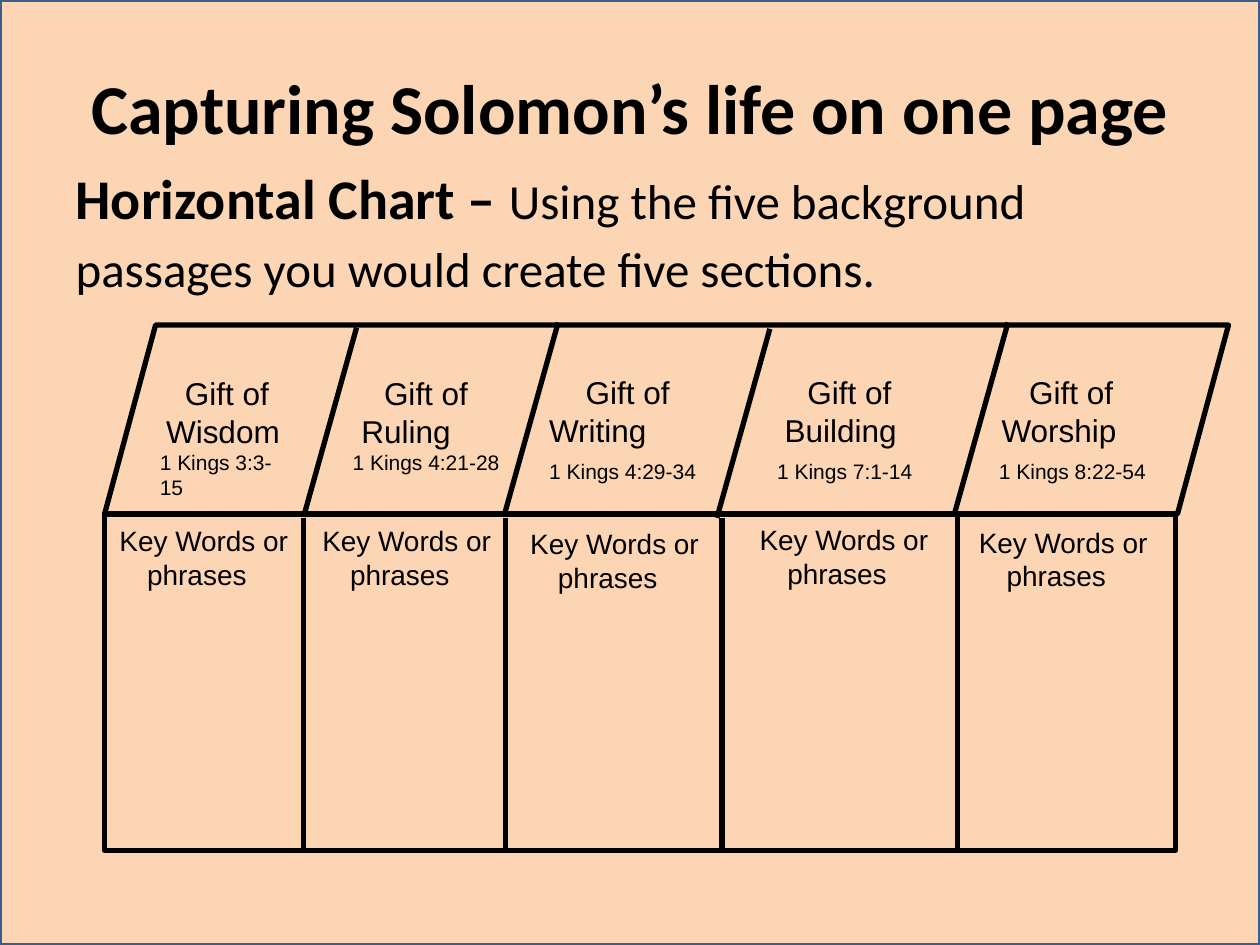
from dataclasses import dataclass
from lxml import etree
from pptx import Presentation
from pptx.dml.color import RGBColor
from pptx.enum.shapes import MSO_CONNECTOR, MSO_SHAPE
from pptx.enum.text import MSO_ANCHOR, PP_ALIGN
from pptx.oxml.ns import qn
from pptx.util import Pt

PX = 9144
RECT, SLANT = MSO_SHAPE.RECTANGLE, MSO_SHAPE.PARALLELOGRAM
STRAIGHT = MSO_CONNECTOR.STRAIGHT
CENTER, LEFT = PP_ALIGN.CENTER, PP_ALIGN.LEFT
MIDDLE = MSO_ANCHOR.MIDDLE


@dataclass(frozen=True)
class Theme:
    ink: str = "000000"
    paper: str = "FCD5B5"
    border: str = "3A5F8C"
    heading_font: str = "Calibri"
    label_font: str = "Arial"
    title: int = 40
    lead: int = 32
    body: int = 28
    gift: int = 18
    key: int = 16
    verse: int = 12
    rule: int = 3


class Deck:
    def __init__(self, prs, theme):
        self.theme = theme
        self.s = prs.slides.add_slide(prs.slide_layouts[1])

    def style(self, r, font, size, bold=False):
        r.font.name, r.font.size, r.font.bold = font, Pt(size), bold
        r.font.color.rgb = RGBColor.from_string(self.theme.ink)

    def place(self, sp, box):
        sp.left, sp.top, sp.width, sp.height = (v * PX for v in box)

    def title(self, box, text):
        sp = self.s.shapes.title
        self.place(sp, box)
        tf = sp.text_frame
        tf.text = text
        tf.vertical_anchor = MIDDLE
        p = tf.paragraphs[0]
        p.alignment = CENTER
        self.style(p.runs[0], self.theme.heading_font, self.theme.title, True)

    def body(self, box, parts):
        sp = self.s.placeholders[1]
        self.place(sp, box)
        p = sp.text_frame.paragraphs[0]
        for text, size, bold in parts:
            r = p.add_run()
            r.text = text
            self.style(r, self.theme.heading_font, size, bold)
        self.indent(p, 0, 0)
        etree.SubElement(p._p.get_or_add_pPr(), qn("a:buNone"))

    def indent(self, p, first, rest):
        pPr = p._p.get_or_add_pPr()
        pPr.set("marL", str(rest * PX))
        pPr.set("indent", str((first - rest) * PX))

    def shape(self, kind, box, line, width, fill=None):
        sp = self.s.shapes.add_shape(kind, *(v * PX for v in box))
        sp.shadow.inherit = False
        if fill:
            sp.fill.solid()
            sp.fill.fore_color.rgb = RGBColor.from_string(fill)
        else:
            sp.fill.background()
        sp.line.color.rgb = RGBColor.from_string(line)
        sp.line.width = Pt(width)
        return sp

    def backdrop(self, box):
        sp = self.shape(RECT, box, self.theme.border, 2, self.theme.paper)
        sp.element.getparent().insert(2, sp.element)

    def line(self, x1, y1, x2, y2):
        ln = self.s.shapes.add_connector(STRAIGHT, *(v * PX for v in (x1, y1, x2, y2)))
        ln.line.color.rgb = RGBColor.from_string(self.theme.ink)
        ln.line.width = Pt(self.theme.rule)
        etree.SubElement(ln.element.spPr, qn("a:effectLst"))

    def label(self, box, paragraphs):
        tf = self.s.shapes.add_textbox(*(v * PX for v in box)).text_frame
        tf.word_wrap = True
        tf.text = "\n".join(text for text, *_ in paragraphs)
        for p, (_, size, first, rest, before) in zip(tf.paragraphs, paragraphs):
            p.alignment = LEFT
            p.space_before = Pt(before)
            self.indent(p, first, rest)
            self.style(p.runs[0], self.theme.label_font, size)


GIFTS = [
    ("Gift of Wisdom", (117, 292, 127, 91), 20, 5, "1 Kings 3:3-15", 0, 0),
    ("Gift of Ruling", (269, 292, 140, 91), 26, 8, "1 Kings 4:21-28", 1, 0),
    ("Gift of Writing", (425, 291, 148, 101), 30, 1, "1 Kings 4:29-34", 1, 6),
    ("Gift of Building", (606, 291, 137, 101), 25, 7, "1 Kings 7:1-14", 1, 6),
    ("Gift of Worship", (780, 291, 142, 101), 27, 5, "1 Kings 8:22-54", 3, 6),
]
KEY_CORNERS = [(83, 411), (244, 411), (409, 413), (591, 410), (765, 412)]
SLANTS = [(283, 260), (443, 256), (611, 261), (800, 256)]
DIVIDERS = [(241, 411), (401, 411), (573, 411), (760, 410)]


def main():
    prs = Presentation()
    prs.slide_width, prs.slide_height = 1000 * PX, 750 * PX
    theme = Theme()
    deck = Deck(prs, theme)

    deck.backdrop((0, 0, 1000, 750))
    deck.title((50, 19, 900, 131), "Capturing Solomon’s life on one page")
    deck.body((50, 125, 900, 567), [
        ("Horizontal Chart – ", theme.lead, True),
        ("Using the five background passages you would create five sections.", theme.body, False),
        (" ", theme.lead, True),
    ])

    deck.shape(RECT, (83, 408, 850, 267), theme.ink, theme.rule)
    header = deck.shape(SLANT, (83, 258, 892, 150), theme.ink, theme.rule)
    header.adjustments[0] = 0.27
    for x, y in SLANTS:
        deck.line(x, y, x - 42, y + 150)
    for x, y in DIVIDERS:
        deck.line(x, y, x, y + 265)

    for gift, box, first, rest, verse, verse_left, before in GIFTS:
        deck.label(box, [
            (gift, theme.gift, first, rest, 0),
            (verse, theme.verse, verse_left, verse_left, before),
        ])
    for x, y in KEY_CORNERS:
        deck.label((x, y, 157, 64), [("Key Words or phrases", theme.key, 2, 24, 0)])

    prs.save("out.pptx")


if __name__ == "__main__":
    main()
